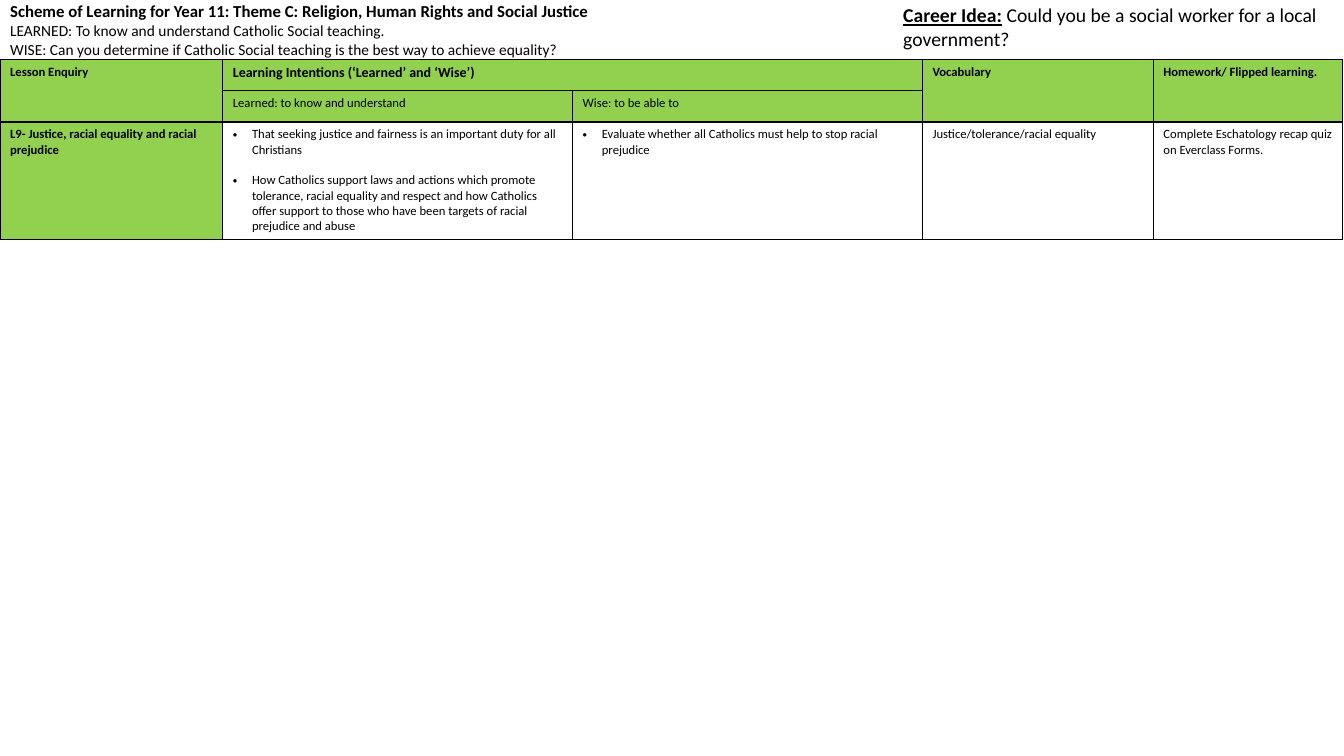
"""Builds the Year 11 scheme of learning slide for lesson 9."""
from lxml.etree import SubElement
from pptx import Presentation
from pptx.dml.color import RGBColor
from pptx.enum.text import MSO_ANCHOR, MSO_AUTO_SIZE, PP_ALIGN
from pptx.oxml.ns import qn
from pptx.util import Inches, Pt

COLORS = {"ink": "000000", "header": "92D050", "body": "FFFFFF"}
HANGING = Inches(0.19)


def add_run(paragraph, text, size, bold=False, underline=False):
    run = paragraph.add_run()
    run.text = text
    run.font.name = "Calibri"
    run.font.size = Pt(size)
    run.font.bold = bold
    run.font.underline = underline
    run.font.color.rgb = RGBColor.from_string(COLORS["ink"])


def style_cell(cell, fill):
    properties = cell._tc.get_or_add_tcPr()
    for side in ("lnL", "lnR", "lnT", "lnB"):
        border = SubElement(properties, qn(f"a:{side}"), w=str(Pt(1)))
        SubElement(SubElement(border, qn("a:solidFill")), qn("a:srgbClr"), val=COLORS["ink"])
    cell.fill.solid()
    cell.fill.fore_color.rgb = RGBColor.from_string(COLORS[fill])


prs = Presentation()
prs.slide_width, prs.slide_height = Inches(13.33), Inches(7.5)
slide = prs.slides.add_slide(prs.slide_layouts[5])

scheme = slide.shapes.title
scheme.left, scheme.top = Inches(0), Inches(-0.04)
scheme.width, scheme.height = Inches(13.33), Inches(0.67)
scheme_text = scheme.text_frame
scheme_text.word_wrap = True
scheme_text.auto_size = MSO_AUTO_SIZE.NONE
scheme_text.vertical_anchor = MSO_ANCHOR.TOP
scheme_lines = [
    ("Scheme of Learning for Year 11: Theme C: Religion, Human Rights and Social Justice", 12, True),
    ("LEARNED: To know and understand Catholic Social teaching.", 11, False),
    ("WISE: Can you determine if Catholic Social teaching is the best way to achieve equality?", 11, False),
]
for index, (text, size, bold) in enumerate(scheme_lines):
    line = scheme_text.add_paragraph() if index else scheme_text.paragraphs[0]
    line.alignment = PP_ALIGN.LEFT
    add_run(line, text, size, bold)

lesson_plan = slide.shapes.add_table(
    3, 5, Inches(0), Inches(0.59), Inches(13.33), Inches(1.79)
).table
for column, width in zip(lesson_plan.columns, (2.21, 3.47, 3.47, 2.29, 1.88)):
    column.width = Inches(width)
for row, height in zip(lesson_plan.rows, (0.31, 0.31, 1.17)):
    row.height = Inches(height)

for row in range(3):
    for column in range(5):
        style_cell(lesson_plan.cell(row, column), "header" if row < 2 or column == 0 else "body")
for column in (0, 3, 4):
    lesson_plan.cell(0, column).merge(lesson_plan.cell(1, column))
lesson_plan.cell(0, 1).merge(lesson_plan.cell(0, 2))

labels = [
    (0, 0, "Lesson Enquiry", 9, True),
    (0, 1, "Learning Intentions (‘Learned’ and ‘Wise’)", 10, True),
    (0, 3, "Vocabulary", 9, True),
    (0, 4, "Homework/ Flipped learning.", 9, True),
    (1, 1, "Learned: to know and understand", 9, False),
    (1, 2, "Wise: to be able to", 9, False),
    (2, 0, "L9- Justice, racial equality and racial prejudice", 9, True),
    (2, 3, "Justice/tolerance/racial equality", 9, False),
    (2, 4, "Complete Eschatology recap quiz on Everclass Forms.", 9, False),
]
for row, column, text, size, bold in labels:
    add_run(lesson_plan.cell(row, column).text_frame.paragraphs[0], text, size, bold)

intentions = {
    1: [
        "That seeking justice and fairness is an important duty for all Christians",
        "How Catholics support laws and actions which promote tolerance, racial equality and "
        "respect and how Catholics offer support to those who have been targets of racial "
        "prejudice and abuse",
    ],
    2: ["Evaluate whether all Catholics must help to stop racial prejudice"],
}
for column, points in intentions.items():
    intention_text = lesson_plan.cell(2, column).text_frame
    for index, point in enumerate(points):
        bullet = intention_text.add_paragraph() if index else intention_text.paragraphs[0]
        bullet.space_before = Pt(11 * index)
        layout = bullet._p.get_or_add_pPr()
        layout.set("marL", str(HANGING))
        layout.set("indent", str(-HANGING))
        SubElement(layout, qn("a:buFont"), typeface="Arial")
        SubElement(layout, qn("a:buChar"), char="•")
        add_run(bullet, point, 9)

career = slide.shapes.add_textbox(Inches(8.86), Inches(-0.02), Inches(4.69), Inches(0.57))
career.text_frame.word_wrap = True
career_line = career.text_frame.paragraphs[0]
add_run(career_line, "Career Idea:", 14, bold=True, underline=True)
add_run(career_line, " Could you be a social worker for a local government?", 14)

prs.save("out.pptx")
